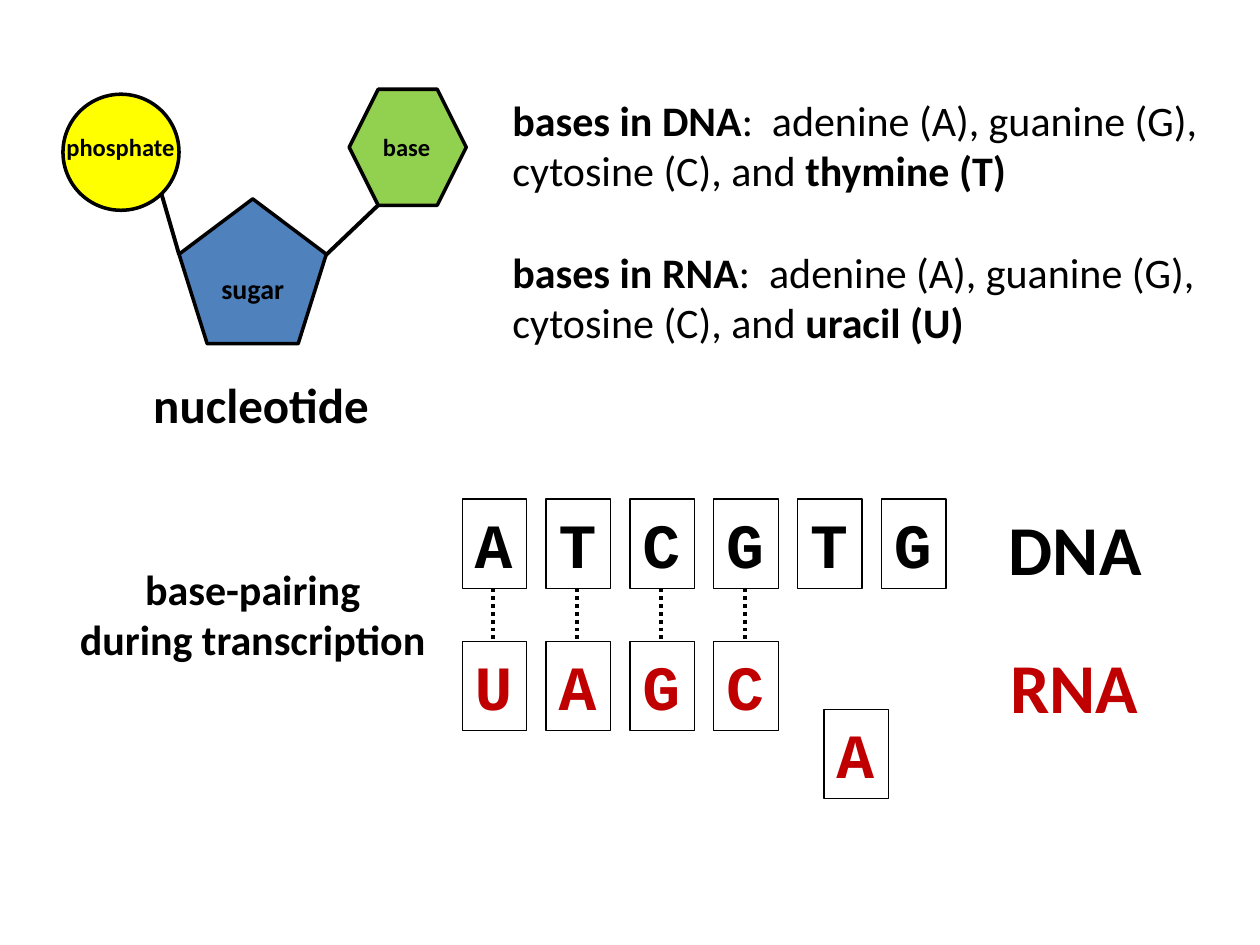
from lxml import etree
from pptx import Presentation
from pptx.dml.color import RGBColor
from pptx.enum import dml, shapes, text
from pptx.oxml import ns
from pptx.util import Cm, Pt

BLACK, RED = "000000", "C00000"
SHAPE = shapes.MSO_SHAPE
CENTER = text.PP_ALIGN.CENTER

# Paragraphs of (wording, bold) runs
BASES = [
    [("bases in DNA", True), (":  adenine (A), guanine (G), cytosine (C), and ", False),
     ("thymine (T)", True)],
    [("bases in RNA", True), (":  adenine (A), guanine (G), cytosine (C), and ", False),
     ("uracil (U)", True)],
]

# Wording, box in cm, size, colour, alignment
LABELS = [
    (["base-pairing", "during transcription"], (1.27, 11.23, 7.65, 2.31), 24, BLACK, CENTER),
    (["DNA"], (20.09, 10.06, 3.23, 1.96), 40, BLACK, None),
    (["RNA"], (20.12, 12.85, 3.23, 1.96), 40, RED, None),
    (["nucleotide"], (2.84, 7.42, 4.9, 1.45), 28, BLACK, None),
]

# Preset, box in cm, fill
NUCLEOTIDE = [
    (SHAPE.REGULAR_PENTAGON, (3.61, 4.01, 2.97, 2.92), "4F81BD"),
    (SHAPE.OVAL, (1.27, 1.9, 2.34, 2.34), "FFFF00"),
    (SHAPE.HEXAGON, (7.04, 1.8, 2.36, 2.34), "92D050"),
]
PART_LABELS = [
    (["phosphate"], (1.09, 2.54, 2.72, 0.86), 14, BLACK, None),
    (["base"], (7.47, 2.54, 1.47, 0.86), 14, BLACK, None),
]
SUGAR_BONDS = [(3.61, 5.13, 3.25, 3.89), (6.55, 5.16, 7.62, 4.14)]

STRANDS = [("ATCGTG", 10.06, BLACK), ("UAGC", 12.93, RED)]
LOOSE_BASE = ("A", 16.61, 14.3, RED)
STRAND_LEFT, STRAND_STEP = 9.32, 1.69
TILE_WIDTH, TILE_HEIGHT = 1.3, 1.8
BOND_OFFSET = 0.62


def cm(values):
    return [Cm(value) for value in values]


def color(value):
    return RGBColor.from_string(value)


def format_text(frame, size, value, font="Calibri", align=None):
    for paragraph in frame.paragraphs:
        paragraph.alignment = align
        for run in paragraph.runs:
            run.font.name, run.font.size, run.font.bold = font, Pt(size), True
            run.font.color.rgb = color(value)


def add_label(slide, lines, box, size, value, align):
    frame = slide.shapes.add_textbox(*cm(box)).text_frame
    frame.text = "\n".join(lines)
    frame.word_wrap = False
    format_text(frame, size, value, align=align)


def add_outlined(slide, preset, box, width, fill=None):
    shape = slide.shapes.add_shape(preset, *cm(box))
    shape.shadow.inherit = False
    if fill:
        shape.fill.solid()
        shape.fill.fore_color.rgb = color(fill)
    else:
        shape.fill.background()
    shape.line.color.rgb = color(BLACK)
    shape.line.width = Pt(width)
    return shape


def add_tile(slide, letter, left, top, value):
    """Draw one base of a strand as a letter in a box."""
    tile = add_outlined(slide, SHAPE.RECTANGLE, (left, top, TILE_WIDTH, TILE_HEIGHT), 0.75)
    frame = tile.text_frame
    frame.text = letter
    frame.word_wrap = False
    frame.vertical_anchor = text.MSO_ANCHOR.TOP
    format_text(frame, 36, value, "Courier New", text.PP_ALIGN.LEFT)


def add_bond(slide, ends, dash=None):
    bond = slide.shapes.add_connector(shapes.MSO_CONNECTOR.STRAIGHT, *cm(ends))
    bond.line.color.rgb = color(BLACK)
    bond.line.width = Pt(2.25)
    if dash:
        bond.line.dash_style = dash
    etree.SubElement(bond._element.spPr, ns.qn("a:effectLst"))


def add_bases(slide):
    frame = slide.shapes.add_textbox(*cm((10.08, 1.78, 14.81, 5.38))).text_frame
    frame.word_wrap = True
    for index, parts in enumerate(BASES):
        paragraph = frame.add_paragraph() if index else frame.paragraphs[0]
        if index:
            paragraph.space_before = Pt(29)
        for wording, bold in parts:
            run = paragraph.add_run()
            run.text = wording
    format_text(frame, 24, BLACK)
    for paragraph, parts in zip(frame.paragraphs, BASES):
        for run, (wording, bold) in zip(paragraph.runs, parts):
            run.font.bold = bold


def add_strands(slide):
    for letters, top, value in STRANDS:
        for index, letter in enumerate(letters):
            add_tile(slide, letter, STRAND_LEFT + index * STRAND_STEP, top, value)
    add_tile(slide, *LOOSE_BASE)
    (_, dna_top, _), (rna_letters, rna_top, _) = STRANDS
    for index in range(len(rna_letters)):
        x = STRAND_LEFT + index * STRAND_STEP + BOND_OFFSET
        add_bond(slide, (x, dna_top + TILE_HEIGHT, x, rna_top), dml.MSO_LINE.ROUND_DOT)


def add_nucleotide(slide):
    parts = [add_outlined(slide, preset, box, 2, fill) for preset, box, fill in NUCLEOTIDE]
    sugar = parts[0].text_frame
    sugar.text = "sugar"
    sugar.vertical_anchor = text.MSO_ANCHOR.MIDDLE
    format_text(sugar, 16, BLACK, align=CENTER)
    for label in PART_LABELS:
        add_label(slide, *label)
    for ends in SUGAR_BONDS:
        add_bond(slide, ends)


def main():
    presentation = Presentation()
    presentation.slide_width, presentation.slide_height = Cm(25.4), Cm(19.05)
    slide = presentation.slides.add_slide(presentation.slide_layouts[6])
    add_bases(slide)
    for label in LABELS:
        add_label(slide, *label)
    add_strands(slide)
    add_nucleotide(slide)
    presentation.save("out.pptx")


if __name__ == "__main__":
    main()
